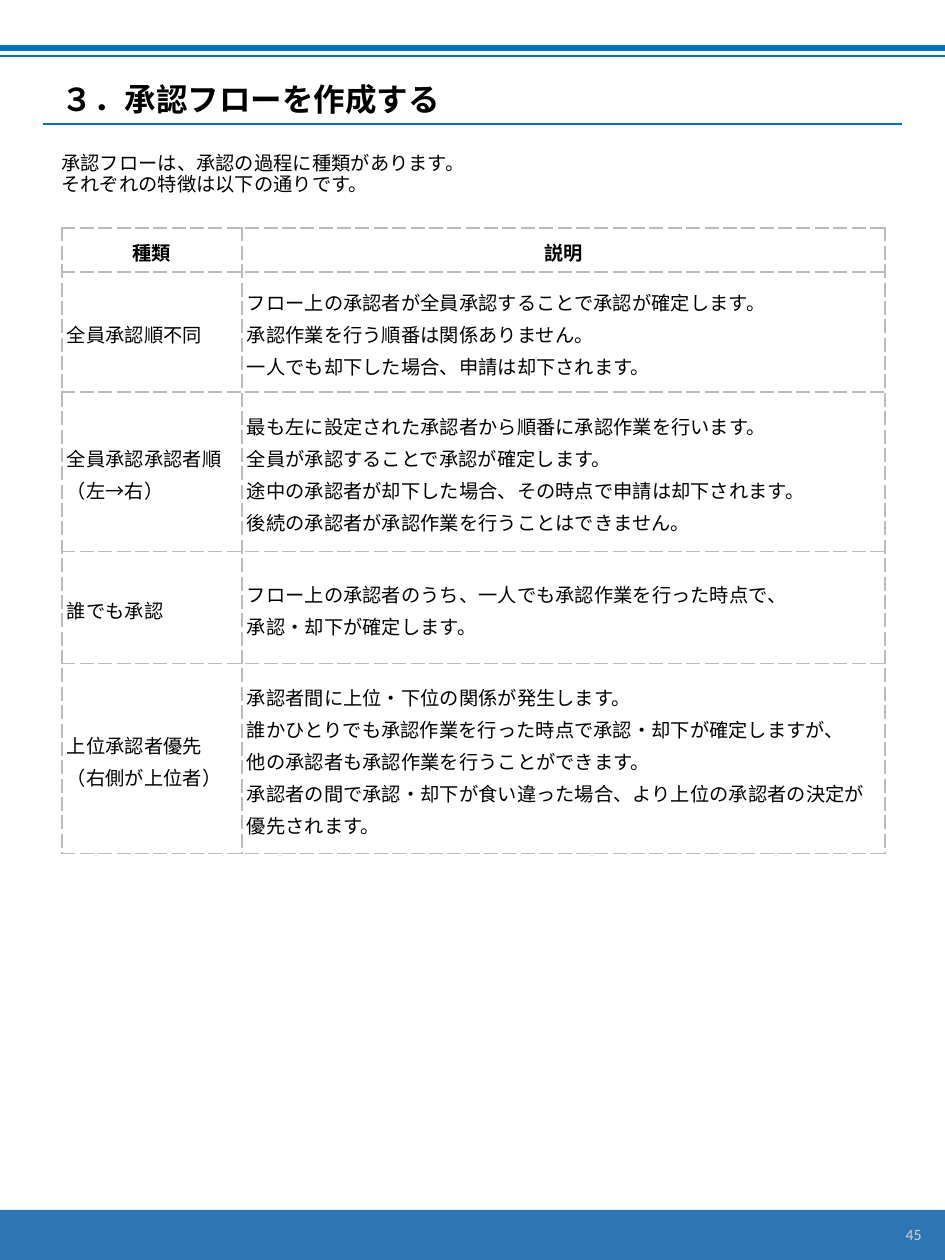
import copy
import dataclasses

import lxml.etree
import pptx
import pptx.dml.color
import pptx.enum.shapes
import pptx.enum.text
import pptx.oxml.ns
import pptx.util

SCALE = 914400 / 126
ALIGN = pptx.enum.text.PP_ALIGN
ANCHOR = pptx.enum.text.MSO_ANCHOR
qn = pptx.oxml.ns.qn


@dataclasses.dataclass(frozen=True)
class Theme:
    ink: str = "000000"
    rule: str = "0070C0"
    band: str = "2E75B5"
    grid: str = "BBBBBB"
    pale: str = "D0CECE"
    font: str = "Arial"
    num_font: str = "Calibri"
    head: int = 18
    body: int = 11
    small: int = 9


THEME = Theme()

HEADS = ["種類", "説明"]
FLOWS = [
    ("全員承認順不同", [
        "フロー上の承認者が全員承認することで承認が確定します。",
        "承認作業を行う順番は関係ありません。",
        "一人でも却下した場合、申請は却下されます。"]),
    ("全員承認承認者順（左→右）", [
        "最も左に設定された承認者から順番に承認作業を行います。",
        "全員が承認することで承認が確定します。",
        "途中の承認者が却下した場合、その時点で申請は却下されます。",
        "後続の承認者が承認作業を行うことはできません。"]),
    ("誰でも承認", [
        "フロー上の承認者のうち、一人でも承認作業を行った時点で、\n"
        "承認・却下が確定します。"]),
    ("上位承認者優先（右側が上位者）", [
        "承認者間に上位・下位の関係が発生します。",
        "誰かひとりでも承認作業を行った時点で承認・却下が確定しますが、\n"
        "他の承認者も承認作業を行うことができます。",
        "承認者の間で承認・却下が食い違った場合、より上位の承認者の決定が優先されます。"]),
]


def px(num):
    return pptx.util.Emu(round(num * SCALE))


def color(code):
    return pptx.dml.color.RGBColor.from_string(code)


def write(frame, lines, size=THEME.body, ink=THEME.ink, font=THEME.font,
          bold=False, align=ALIGN.LEFT, space=1.15):
    """Fill a text frame, one paragraph per line; a newline is a soft break."""
    frame.word_wrap = True
    for i, line in enumerate(lines):
        para = frame.add_paragraph() if i else frame.paragraphs[0]
        para.text = line
        para.alignment = align
        para.line_spacing = space
        for run in para.runs:
            run.font.size = pptx.util.Pt(size)
            run.font.name = font
            run.font.bold = bold
            run.font.color.rgb = color(ink)
        for gap in para._p.findall(qn("a:br")):
            gap.append(copy.deepcopy(para.runs[0]._r.rPr))


def add_rule(shapes, left, top, width, weight):
    line = shapes.add_connector(pptx.enum.shapes.MSO_CONNECTOR.STRAIGHT,
                                px(left), px(top), px(left + width), px(top))
    line.line.color.rgb = color(THEME.rule)
    line.line.width = pptx.util.Pt(weight)
    lxml.etree.SubElement(line._element.spPr, qn("a:effectLst"))


def add_header(slide, left, top, width):
    pair = slide.shapes.add_group_shape()
    add_rule(pair.shapes, left, top, width, 3)
    add_rule(pair.shapes, left, top + 8, width, 0.75)


def add_title(slide, left, top, width, height):
    title = slide.shapes.title
    title.left, title.top = px(left + 6), px(top)
    title.width, title.height = px(width), px(height)
    title.text_frame.vertical_anchor = ANCHOR.BOTTOM
    write(title.text_frame, ["３．承認フローを作成する"], THEME.head,
          bold=True, space=1.08)
    add_rule(slide.shapes, left, top + height, width, 0.75)


def add_intro(slide, left, top, width, height):
    box = slide.shapes.add_textbox(px(left), px(top), px(width), px(height))
    write(box.text_frame, ["承認フローは、承認の過程に種類があります。\n"
                           "それぞれの特徴は以下の通りです。"], space=0.92)


def add_edges(cell):
    """Draw a dashed border on all four sides of a table cell."""
    props = cell._tc.get_or_add_tcPr()
    for side in ("lnL", "lnR", "lnT", "lnB"):
        edge = lxml.etree.SubElement(props, qn(f"a:{side}"),
                                     w=str(pptx.util.Pt(0.75)))
        fill = lxml.etree.SubElement(edge, qn("a:solidFill"))
        lxml.etree.SubElement(fill, qn("a:srgbClr"), val=THEME.grid)
        lxml.etree.SubElement(edge, qn("a:prstDash"), val="dash")


def add_cell(cell, lines, **style):
    add_edges(cell)
    cell.fill.background()
    cell.vertical_anchor = ANCHOR.MIDDLE
    cell.margin_left = cell.margin_right = px(5)
    cell.margin_top = cell.margin_bottom = px(3)
    write(cell.text_frame, lines, **style)


def add_flows(slide, left, top, cols, rows):
    frame = slide.shapes.add_table(len(rows), len(cols), px(left), px(top),
                                   px(sum(cols)), px(sum(rows)))
    table = frame.table
    table.first_row = table.horz_banding = False
    for col, width in zip(table.columns, cols):
        col.width = px(width)
    for row, height in zip(table.rows, rows):
        row.height = px(height)
    for c, head in enumerate(HEADS):
        add_cell(table.cell(0, c), [head], bold=True, align=ALIGN.CENTER)
    for r, (kind, notes) in enumerate(FLOWS, 1):
        add_cell(table.cell(r, 0), [kind])
        add_cell(table.cell(r, 1), notes)


def add_footer(slide, left, top, width, height):
    band = slide.shapes.add_shape(pptx.enum.shapes.MSO_SHAPE.RECTANGLE,
                                  px(left), px(top), px(width), px(height))
    band.shadow.inherit = False
    band.fill.solid()
    band.fill.fore_color.rgb = color(THEME.band)
    band.line.fill.background()
    box = slide.shapes.add_textbox(px(left + width - 224), px(top),
                                   px(213), px(height - 2))
    box.text_frame.vertical_anchor = ANCHOR.MIDDLE
    write(box.text_frame, ["45"], THEME.small, THEME.pale, THEME.num_font,
          align=ALIGN.RIGHT, space=1.0)


def main():
    deck = pptx.Presentation()
    deck.slide_width, deck.slide_height = px(945), px(1260)
    slide = deck.slides.add_slide(deck.slide_layouts[5])
    add_footer(slide, 0, 1210, 945, 50)
    add_header(slide, 0, 48, 945)
    add_title(slide, 43, 67, 859, 57)
    add_intro(slide, 49, 147, 845, 57)
    add_flows(slide, 62, 228, [180, 643], [44, 120, 160, 112, 190])
    deck.save("out.pptx")


if __name__ == "__main__":
    main()
